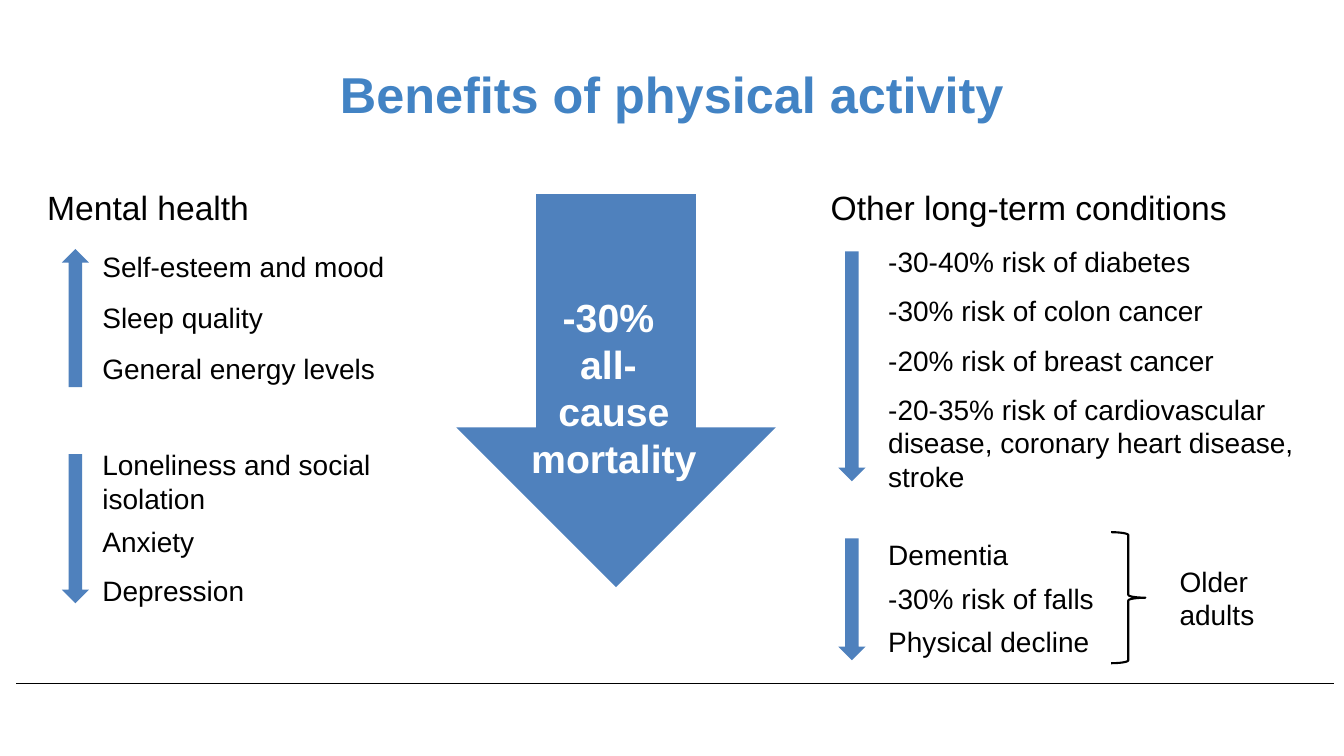
from dataclasses import dataclass
from pptx import Presentation
from pptx.dml.color import RGBColor as Rgb
from pptx.enum.shapes import MSO_CONNECTOR as Link, MSO_SHAPE as Kind
from pptx.enum.text import MSO_ANCHOR as Anchor, MSO_AUTO_SIZE as Fit, PP_ALIGN as Align
from pptx.oxml.ns import qn
from pptx.util import Inches, Pt
from lxml.etree import SubElement as Sub


@dataclass(frozen=True)
class Theme:
    font: str = "Arial"
    ink: Rgb = Rgb(0, 0, 0)
    head: Rgb = Rgb(0x42, 0x83, 0xC4)
    fill: Rgb = Rgb(0x4F, 0x81, 0xBD)
    pale: Rgb = Rgb(255, 255, 255)
    title: int = 36
    big: int = 28
    topic: int = 24
    body: int = 20


LOOK = Theme()
WIDE, HIGH = Inches(13.33), Inches(7.5)
COLS, ROWS = 40, 30
BAR = 0.81


def col(n):
    return round(WIDE * n / COLS)


def row(n):
    return round(HIGH * n / ROWS)


def area(x, y, w, h):
    return col(x), row(y), col(w), row(h)


def text(slide, box, lines, size=LOOK.body, color=LOOK.ink, bold=False,
         align=Align.LEFT, fit=Fit.SHAPE_TO_FIT_TEXT, anchor=Anchor.TOP):
    frame = slide.shapes.add_textbox(*area(*box)).text_frame
    frame.word_wrap = True
    frame.auto_size = fit
    frame.vertical_anchor = anchor
    for i, line in enumerate(lines):
        para = frame.paragraphs[0] if i == 0 else frame.add_paragraph()
        para.alignment = align
        run = para.add_run()
        run.text = line
        font = run.font
        font.name, font.size, font.bold = LOOK.font, Pt(size), bold
        font.color.rgb = color


def items(slide, x, y, w, step, lines):
    for i, line in enumerate(lines):
        text(slide, (x, y + i * step, w, 1.76), [line])


def arrow(slide, kind, box):
    shape = slide.shapes.add_shape(kind, *area(*box))
    shape.shadow.inherit = False
    shape.fill.solid()
    shape.fill.fore_color.rgb = LOOK.fill
    shape.line.fill.background()


def brace(slide, box):
    shape = slide.shapes.add_shape(Kind.RIGHT_BRACE, *area(*box))
    shape.shadow.inherit = False
    shape.fill.background()
    shape.line.color.rgb = LOOK.ink
    shape.line.width = Pt(1.5)


def rule(slide, left, right, y):
    line = slide.shapes.add_connector(Link.STRAIGHT, col(left), row(y), col(right), row(y))
    line.line.color.rgb = LOOK.ink
    line.line.width = Pt(1)
    Sub(line._element.spPr, qn("a:effectLst"))


def mental(slide):
    text(slide, (1.11, 7.24, 8.31, 2), ["Mental health"], LOOK.topic)
    arrow(slide, Kind.UP_ARROW, (1.84, 9.88, BAR, 5.48))
    items(slide, 2.75, 9.72, 9.7, 2.02,
          ["Self-esteem and mood", "Sleep quality", "General energy levels"])
    arrow(slide, Kind.DOWN_ARROW, (1.84, 18.02, BAR, 5.92))
    text(slide, (2.75, 17.56, 9.7, 3.08), ["Loneliness and social isolation"])
    items(slide, 2.75, 20.6, 9.7, 1.96, ["Anxiety", "Depression"])


def deaths(slide):
    arrow(slide, Kind.DOWN_ARROW, (13.58, 7.7, 9.51, 15.6))
    text(slide, (15.42, 11.44, 5.7, 8.16), ["-30% ", "all- ", "cause mortality"],
         LOOK.big, LOOK.pale, True, Align.CENTER)


def others(slide):
    text(slide, (24.43, 7.24, 12.39, 2), ["Other long-term conditions"], LOOK.topic)
    arrow(slide, Kind.DOWN_ARROW, (24.95, 9.98, BAR, 9.12))
    items(slide, 26.14, 9.52, 12.39, 1.95,
          ["-30-40% risk of diabetes", "-30% risk of colon cancer",
           "-20% risk of breast cancer"])
    text(slide, (26.14, 15.36, 12.84, 4.44),
         ["-20-35% risk of cardiovascular disease, coronary heart disease, stroke"])
    arrow(slide, Kind.DOWN_ARROW, (24.95, 21.36, BAR, 4.84))
    items(slide, 26.14, 21.12, 8.97, 1.74,
          ["Dementia", "-30% risk of falls", "Physical decline"])
    brace(slide, (33.07, 21.12, 1.02, 5.2))
    text(slide, (34.81, 22.2, 4.56, 3.08), ["Older adults"])


def main():
    deck = Presentation()
    deck.slide_width, deck.slide_height = WIDE, HIGH
    slide = deck.slides.add_slide(deck.slide_layouts[6])
    rule(slide, 0.48, 39.7, 27.12)
    text(slide, (2, 1.2, 36, 5), ["Benefits of physical activity"], LOOK.title,
         LOOK.head, True, Align.CENTER, Fit.NONE, Anchor.MIDDLE)
    mental(slide)
    deaths(slide)
    others(slide)
    deck.save("out.pptx")


if __name__ == "__main__":
    main()
